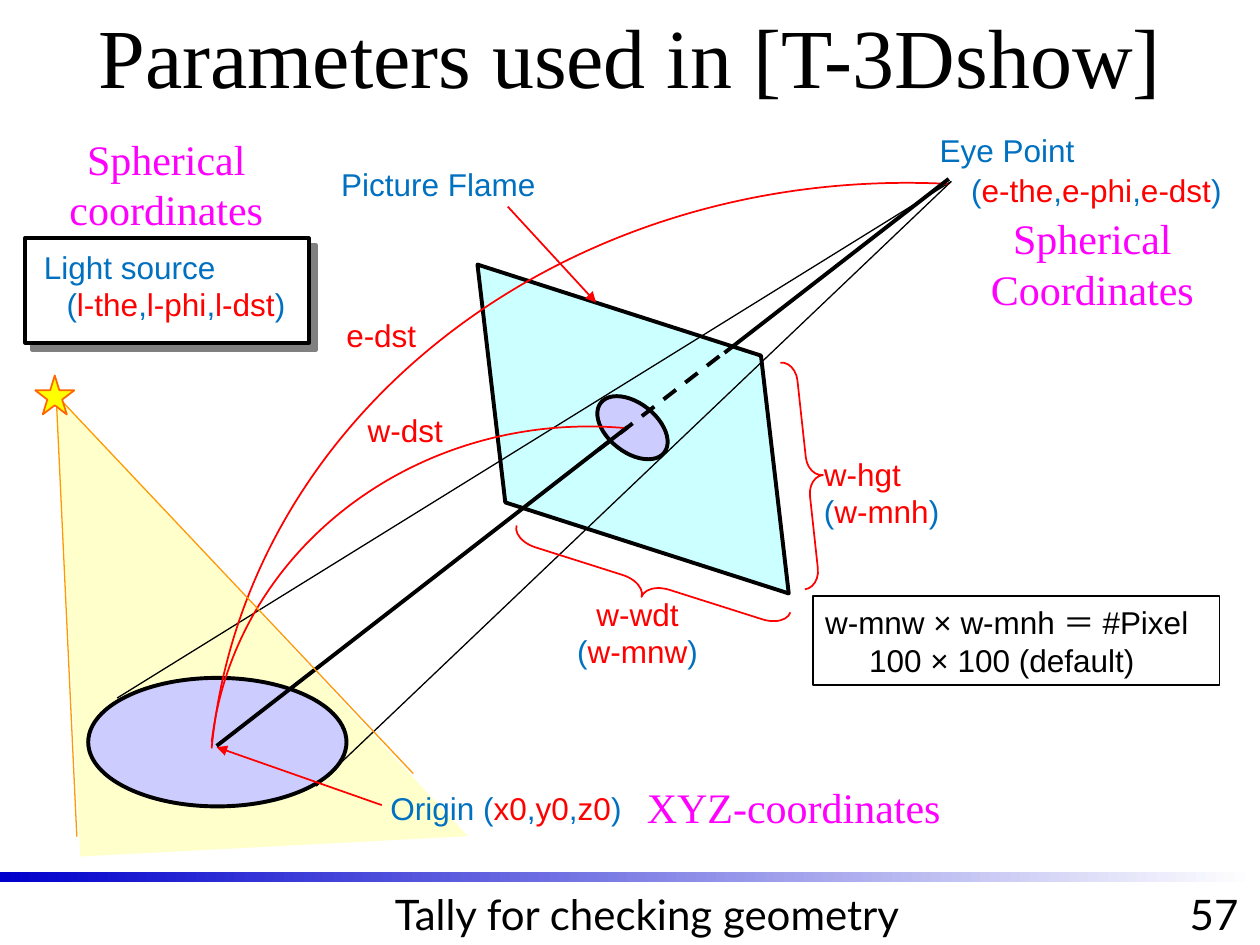
from dataclasses import dataclass

from lxml import etree
from pptx import Presentation
from pptx.dml.color import RGBColor
from pptx.enum.dml import MSO_LINE_DASH_STYLE as Dash
from pptx.enum.shapes import MSO_CONNECTOR, MSO_SHAPE as Preset
from pptx.enum.text import MSO_ANCHOR as Anchor, PP_ALIGN as Align
from pptx.oxml.ns import qn
from pptx.util import Inches, Pt


@dataclass(frozen=True)
class Theme:
    black: str = "000000"
    white: str = "FFFFFF"
    red: str = "FF0000"
    blue: str = "0070C0"
    magenta: str = "FF00FF"
    bar: str = "0000CC"
    frame: str = "CCFFFF"
    target: str = "CCCCFF"
    beam: str = "FFFF99"
    beam_edge: str = "FF9900"
    star: str = "FFFF00"
    star_edge: str = "FF6600"
    shadow: str = "808080"
    label_font: str = "Arial"
    heading_font: str = "Times New Roman"
    footer_font: str = "Lato"
    label_size: int = 18
    heading_size: int = 24
    title_size: int = 48
    thick: float = 2.25
    medium: float = 1
    thin: float = 0.75


THEME = Theme()
WIDTH, HEIGHT = Inches(10), Inches(7.5)
COLUMNS, ROWS = 100, 75


def column(count):
    return round(WIDTH * count / COLUMNS)


def row(count):
    return round(HEIGHT * count / ROWS)


def grid_box(left, top, width, height):
    return column(left), row(top), column(width), row(height)


def rgb(color):
    return RGBColor.from_string(color)


def style_line(line, color, weight):
    line.color.rgb = rgb(color)
    line.width = Pt(weight)


def add_preset(slide, preset, box, fill=None, line=None, weight=THEME.medium,
               rotation=0, adjustments=()):
    shape = slide.shapes.add_shape(preset, *grid_box(*box))
    shape.shadow.inherit = False
    shape.rotation = rotation
    for index, value in enumerate(adjustments):
        shape.adjustments[index] = value
    if fill:
        shape.fill.solid()
        shape.fill.fore_color.rgb = rgb(fill)
    else:
        shape.fill.background()
    if line:
        style_line(shape.line, line, weight)
    else:
        shape.line.fill.background()
    return shape


def add_line(slide, start, end, color=THEME.black, weight=THEME.thick,
             dash=None, arrow=False):
    connector = slide.shapes.add_connector(
        MSO_CONNECTOR.STRAIGHT, column(start[0]), row(start[1]), column(end[0]), row(end[1]))
    style_line(connector.line, color, weight)
    if dash:
        connector.line.dash_style = dash
    if arrow:
        etree.SubElement(connector.line._get_or_add_ln(), qn("a:tailEnd"), type="triangle")
    etree.SubElement(connector._element.spPr, qn("a:effectLst"))
    return connector


def add_curve(slide, start, *points):
    """Draw one cubic curve: start, two control points and the end."""
    builder = slide.shapes.build_freeform(column(start[0]), row(start[1]))
    builder.add_line_segments([(column(x), row(y)) for x, y in points], close=False)
    shape = builder.convert_to_shape()
    path = shape._element.find(".//" + qn("a:path"))
    curve = etree.SubElement(path, qn("a:cubicBezTo"))
    for segment in path.findall(qn("a:lnTo")):
        curve.append(segment[0])
        path.remove(segment)
    shape.shadow.inherit = False
    shape.fill.background()
    style_line(shape.line, THEME.red, THEME.medium)


def format_run(run, font, size, color):
    run.font.name = font
    run.font.size = Pt(size)
    run.font.color.rgb = rgb(color)


def write_lines(text_frame, lines, font, size, colors, align=Align.LEFT):
    """Fill a frame; "|" inside a line switches to the next of the colors."""
    for index, line in enumerate(lines):
        paragraph = text_frame.paragraphs[0] if index == 0 else text_frame.add_paragraph()
        paragraph.alignment = align
        for part, text in enumerate(line.split("|")):
            if text:
                run = paragraph.add_run()
                run.text = text
                format_run(run, font, size, colors[part % len(colors)])


def add_label(slide, box, *lines, align=Align.LEFT):
    """Plain words are blue, and the parameters set off by "|" are red."""
    text_frame = slide.shapes.add_textbox(*grid_box(*box)).text_frame
    text_frame.word_wrap = False
    write_lines(text_frame, lines, THEME.label_font, THEME.label_size,
                (THEME.blue, THEME.red), align)


def add_centred_text(slide, box, text, font=THEME.heading_font, color=THEME.magenta):
    text_frame = slide.shapes.add_textbox(*grid_box(*box)).text_frame
    text_frame.word_wrap = True
    write_lines(text_frame, [text], font, THEME.heading_size, [color], Align.CENTER)


def add_title(slide, text):
    title = slide.shapes.title
    title.left, title.top, title.width, title.height = grid_box(0, 0, 100, 8.8)
    title.text_frame.text = text
    title.text_frame.vertical_anchor = Anchor.MIDDLE
    paragraph = title.text_frame.paragraphs[0]
    paragraph.alignment = Align.CENTER
    format_run(paragraph.runs[0], THEME.heading_font, THEME.title_size, THEME.black)


def add_footer(slide):
    bar = add_preset(slide, Preset.RECTANGLE, (0, 69.2, 99.6, 0.8))
    bar.fill.gradient()
    bar.fill.gradient_angle = 0
    for stop, position, color in zip(bar.fill.gradient_stops, (0, 1), (THEME.bar, THEME.white)):
        stop.position = position
        stop.color.rgb = rgb(color)
    for box, text in (((92.4, 70, 7.9, 5), "57"),
                      ((21.2, 70, 60.3, 5), "Tally for checking geometry")):
        add_centred_text(slide, box, text, THEME.footer_font, THEME.black)


def add_scene(slide):
    beam = add_preset(slide, Preset.RIGHT_TRIANGLE, (5.4, 30.5, 30.8, 36.7), THEME.beam,
                      rotation=357)
    beam_color = beam._element.spPr.find(qn("a:solidFill"))[0]
    etree.SubElement(beam_color, qn("a:alpha"), val="50000")
    frame = add_preset(slide, Preset.PARALLELOGRAM, (34.5, 25.4, 31.5, 17.3), THEME.frame,
                       THEME.black, THEME.thick, 17.8, [0.455])
    frame._element.spPr.xfrm.set("flipH", "1")
    for box, rotation in (((47, 32, 6.4, 3.9), 38.2), ((7, 53.8, 20.5, 10.2), 0)):
        add_preset(slide, Preset.OVAL, box, THEME.target, THEME.black, THEME.thick, rotation)

    eye = (75.5, 14.4)
    add_line(slide, (17.2, 59.2), (49.8, 33.9))
    for edge in ((9.3, 55.4), (25.1, 62.4)):
        add_line(slide, edge, eye, weight=THEME.thin)
    for start, end in (((30.3, 63.9), (17.2, 59.3)), ((40.3, 16.4), (47.3, 24))):
        add_line(slide, start, end, THEME.red, THEME.medium, arrow=True)

    for box, rotation, adjustments in (((62.9, 28.6, 2.4, 18.1), 353.8, (0.64, 0.51)),
                                       ((50.3, 34.9, 2.4, 22.8), 107.6, (0.81, 0.51))):
        add_preset(slide, Preset.RIGHT_BRACE, box, line=THEME.red, rotation=rotation,
                   adjustments=adjustments)
    add_curve(slide, (16.8, 58.9), (18.6, 43.5), (33.3, 32.4), (49.9, 34))
    add_curve(slide, (16.8, 59.4), (19.4, 32.8), (45, 13.1), (75.2, 14.6))

    for start, end in (((6.1, 66.4), (4.5, 32.3)), ((32.8, 61.4), (4.5, 31.4))):
        add_line(slide, start, end, THEME.beam_edge, THEME.thin)
    add_preset(slide, Preset.STAR_5_POINT, (2.8, 29.8, 3.1, 3.1), THEME.star, THEME.star_edge)
    add_line(slide, (47.5, 35.7), (57.7, 27.8), dash=Dash.DASH)
    add_line(slide, (57.5, 28), (75.3, 14.2))


def add_light_source_panel(slide):
    panel = add_preset(slide, Preset.RECTANGLE, (2, 18.9, 22.5, 8.3), THEME.white,
                       THEME.black, THEME.thick)
    effects = panel._element.spPr.find(qn("a:effectLst"))
    shadow = etree.SubElement(effects, qn("a:outerShdw"), blurRad="0", dist=str(Pt(5.7)),
                              dir="2700000", algn="ctr", rotWithShape="0")
    etree.SubElement(shadow, qn("a:srgbClr"), val=THEME.shadow)


def add_pixel_panel(slide):
    panel = add_preset(slide, Preset.RECTANGLE, (64.5, 47.3, 32.3, 7.1), THEME.white, THEME.black)
    text_frame = panel.text_frame
    text_frame.word_wrap = False
    write_lines(text_frame, ["w-mnw × w-mnh ＝ #Pixel", "100 × 100 (default)"],
                THEME.label_font, THEME.label_size, [THEME.black])
    properties = text_frame.paragraphs[1]._p.get_or_add_pPr()
    properties.set("marL", str(column(3.5)))
    properties.set("indent", "0")


def add_labels(slide):
    add_label(slide, (30, 62.1, 20.5, 4), "Origin (|x0|,|y0|,|z0|)")
    add_label(slide, (73.6, 9.9, 12.8, 4), "Eye Point")
    add_label(slide, (76.1, 13.1, 21.9, 4), "(|e-the|,|e-phi|,|e-dst|)")
    add_label(slide, (26.1, 12.6, 17.6, 4), "Picture Flame")
    add_label(slide, (2.5, 19.2, 15.8, 4), "Light source")
    add_label(slide, (4.3, 22.1, 19.4, 4), "(|l-the|,|l-phi|,|l-dst|)")
    add_label(slide, (26.5, 24.6, 7.6, 4), "|e-dst")
    add_label(slide, (28.2, 32.1, 8, 4), "|w-dst")
    add_label(slide, (64.4, 35.6, 11.2, 7), "|w-hgt", "(|w-mnh|)")
    add_label(slide, (44.8, 46.7, 11.6, 7), "|w-wdt", "(|w-mnw|)", align=Align.CENTER)
    add_centred_text(slide, (75.5, 16.4, 22.4, 9.1), "Spherical Coordinates")
    add_centred_text(slide, (2.2, 10.1, 22, 9.1), "Spherical coordinates")
    add_centred_text(slide, (48, 61.5, 30, 5), "XYZ-coordinates")


def main():
    presentation = Presentation()
    presentation.slide_width, presentation.slide_height = WIDTH, HEIGHT
    slide = presentation.slides.add_slide(presentation.slide_layouts[5])
    add_title(slide, "Parameters used in [T-3Dshow]")
    add_footer(slide)
    add_scene(slide)
    add_light_source_panel(slide)
    add_pixel_panel(slide)
    add_labels(slide)
    presentation.save("out.pptx")


if __name__ == "__main__":
    main()
